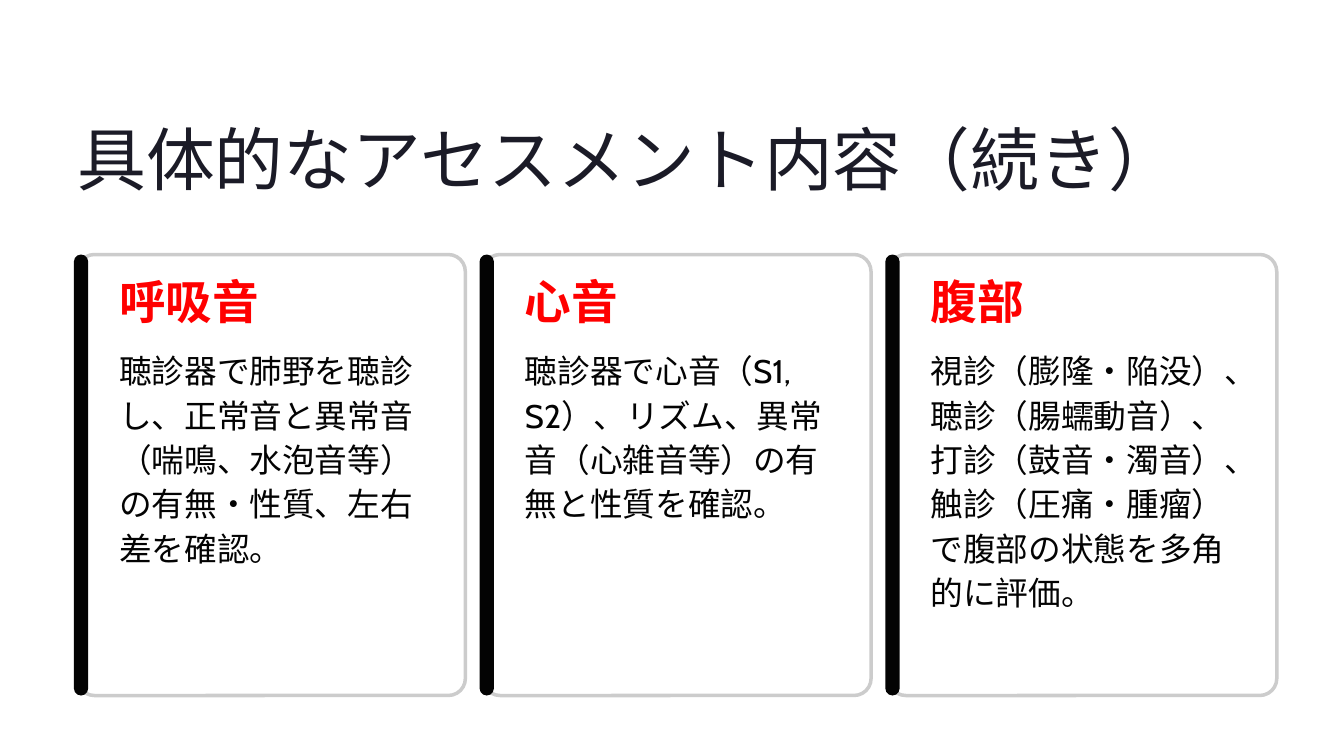
from dataclasses import dataclass

from lxml import etree
from pptx import Presentation
from pptx import util as u
from pptx.dml.color import RGBColor
from pptx.enum import shapes, text
from pptx.oxml.ns import qn


@dataclass(frozen=True)
class Theme:
    ink: str = "1B1B27"
    black: str = "030303"
    red: str = "FF0000"
    white: str = "FFFFFF"
    edge: str = "CCCCCC"
    head: str = "Inter"
    body: str = "Cabin"
    title: int = 59
    label: int = 40
    copy: int = 28


T = Theme()
LEFT, STEP = 0.92, 4.83
TOP, WIDE, HIGH = 3.03, 4.62, 5.25
INSET, TEXT_W = 0.5, 3.63

CARDS = [
    ("呼吸音", "聴診器で肺野を聴診し、正常音と異常音（喘鳴、水泡音等）の有無・性質、左右差を確認。", 2.64),
    ("心音", "聴診器で心音（S1, S2）、リズム、異常音（心雑音等）の有無と性質を確認。", 2.11),
    ("腹部", "視診（膨隆・陥没）、聴診（腸蠕動音）、打診（鼓音・濁音）、"
     "触診（圧痛・腫瘤）で腹部の状態を多角的に評価。", 3.17),
]


def place(*box):
    return [u.Inches(side) for side in box]


def write(slide, words, box, *, size, lead, font, color, bold=False, wrap=False):
    frame = slide.shapes.add_textbox(*place(*box)).text_frame
    frame.word_wrap = wrap
    frame.vertical_anchor = text.MSO_ANCHOR.TOP
    frame.margin_left = frame.margin_right = 0
    frame.margin_top = frame.margin_bottom = 0
    para = frame.paragraphs[0]
    para.line_spacing = u.Pt(lead)
    run = para.add_run()
    run.text = words
    run.font.size = u.Pt(size)
    run.font.bold = bold
    run.font.color.rgb = RGBColor.from_string(color)
    run.font.name = font
    # East Asian glyphs need the typeface named separately.
    etree.SubElement(run.font._element, qn("a:ea")).set("typeface", font)


def panel(slide, box, *, fill, curve, edge=None, alpha=None):
    """Add a rounded box; alpha is its opacity in percent."""
    shape = slide.shapes.add_shape(
        shapes.MSO_SHAPE.ROUNDED_RECTANGLE, *place(*box))
    shape.shadow.inherit = False
    shape.adjustments[0] = curve
    shape.fill.solid()
    shape.fill.fore_color.rgb = RGBColor.from_string(fill)
    if alpha is not None:
        tint = shape._element.spPr.find(qn("a:solidFill"))[0]
        etree.SubElement(tint, qn("a:alpha")).set("val", str(alpha * 1000))
    if edge:
        shape.line.color.rgb = RGBColor.from_string(edge)
        shape.line.width = u.Pt(3)
    else:
        shape.line.fill.background()


def card(slide, left, label, words, depth):
    panel(slide, (left, TOP, WIDE, HIGH), fill=T.white, curve=0.044,
          edge=T.edge, alpha=95)
    panel(slide, (left - 0.04, TOP, 0.17, HIGH), fill=T.black, curve=0.5)
    write(slide, label, (left + INSET, 3.4, TEXT_W, 0.52), size=T.label,
          lead=37, font=T.head, color=T.red, bold=True)
    write(slide, words, (left + INSET, 4.12, TEXT_W, depth), size=T.copy,
          lead=38, font=T.body, color=T.black, wrap=True)


def main():
    deck = Presentation()
    deck.slide_width, deck.slide_height = place(16, 9)
    slide = deck.slides.add_slide(deck.slide_layouts[6])
    write(slide, "具体的なアセスメント内容（続き）", (LEFT, 1.34, 13.19, 1.03),
          size=T.title, lead=74, font=T.head, color=T.ink)
    for col, (label, words, depth) in enumerate(CARDS):
        card(slide, LEFT + col * STEP, label, words, depth)
    deck.save("out.pptx")


if __name__ == "__main__":
    main()
